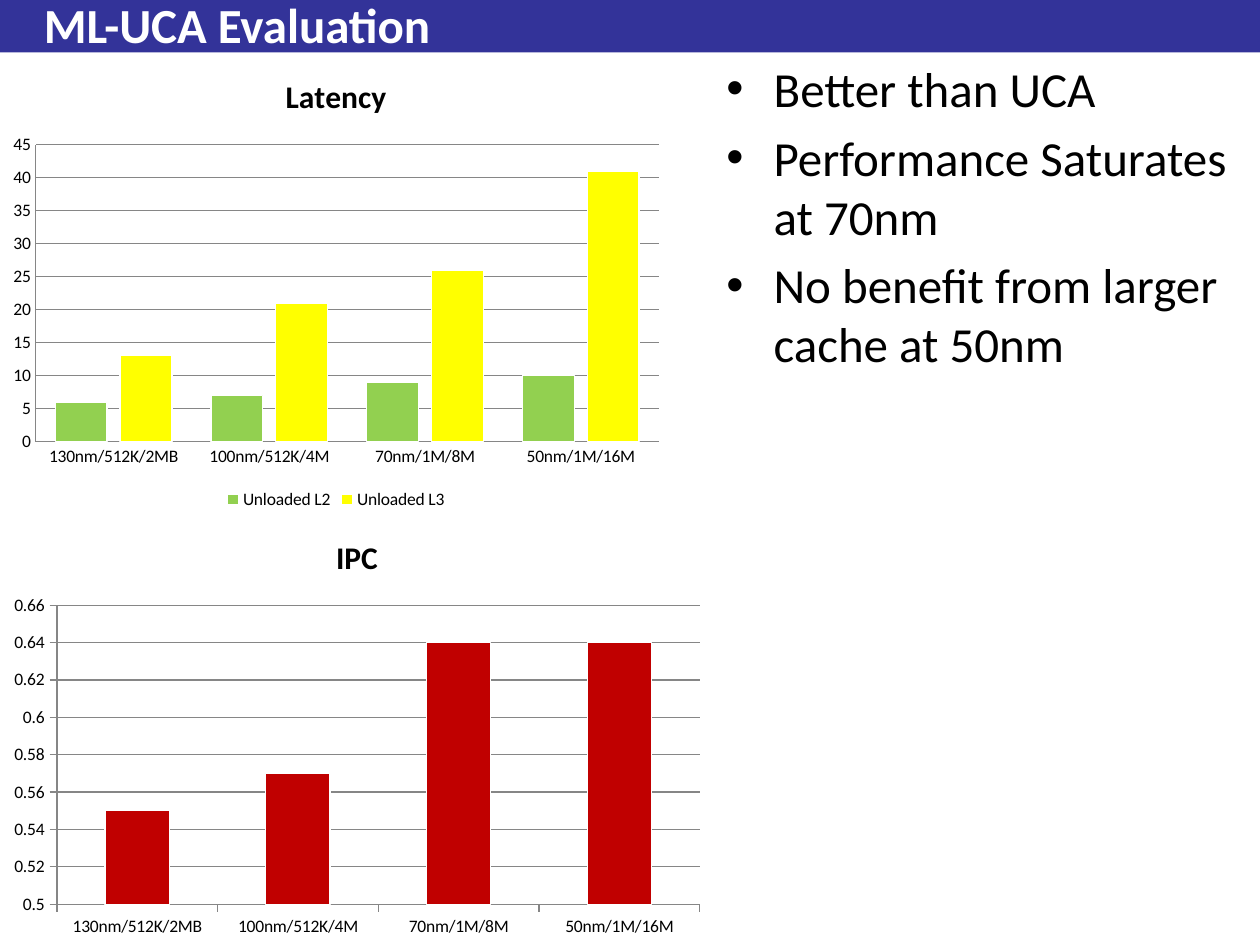
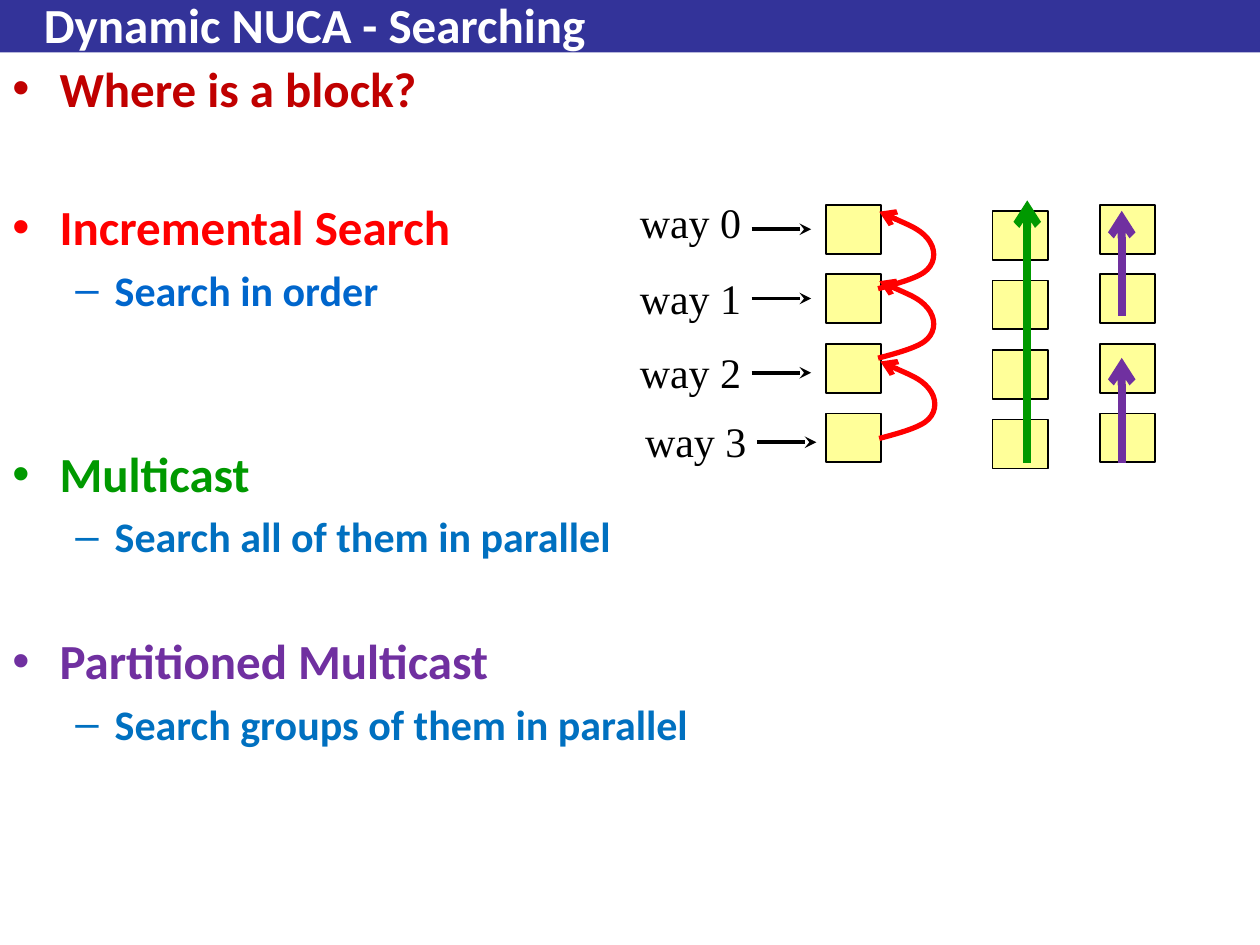
from pptx import Presentation
from pptx.chart.data import CategoryChartData
from pptx.dml.color import RGBColor
from pptx.enum.chart import XL_CHART_TYPE, XL_LEGEND_POSITION, XL_TICK_MARK
from pptx.enum.shapes import MSO_CONNECTOR, MSO_SHAPE
from pptx.enum.text import MSO_ANCHOR, MSO_AUTO_SIZE
from pptx.oxml.ns import qn
from pptx.util import Pt
from lxml import etree

COLUMNS = XL_CHART_TYPE.COLUMN_CLUSTERED
BOTTOM = XL_LEGEND_POSITION.BOTTOM
TICK_NONE, TICK_OUT = XL_TICK_MARK.NONE, XL_TICK_MARK.OUTSIDE
RECTANGLE, STRAIGHT = MSO_SHAPE.RECTANGLE, MSO_CONNECTOR.STRAIGHT
TOP, MIDDLE = MSO_ANCHOR.TOP, MSO_ANCHOR.MIDDLE
NO_FIT = MSO_AUTO_SIZE.NONE

BLACK, WHITE, NAVY, GRAY = "000000", "FFFFFF", "333399", "868686"
CREAM, RED, DARK_RED = "FFFF99", "FF0000", "C00000"
GREEN, PURPLE, BLUE = "009900", "7030A0", "0070C0"
LIME, YELLOW = "92D050", "FFFF00"

# bullet, left margin, hanging indent, text size for each outline level
LEVELS = [("•", 27, 27, 28), ("–", 58.5, 22.5, 24)]
TECHNOLOGIES = ["130nm/512K/2MB", "100nm/512K/4M", "70nm/1M/8M", "50nm/1M/16M"]


def color(code):
    return RGBColor.from_string(code)


def assign(target, values):
    for name, value in values.items():
        setattr(target, name, value)


def style_font(font, size, code=BLACK, bold=False, name="Calibri"):
    assign(font, {"size": Pt(size), "bold": bold, "name": name})
    font.color.rgb = color(code)


def style_line(line, code, width):
    line.color.rgb = color(code)
    line.width = Pt(width)


def style_fill(fill, code):
    fill.solid()
    fill.fore_color.rgb = color(code)


def add_arrowhead(shape, kind):
    outline = shape._element.xpath(".//a:ln")[0]
    etree.SubElement(outline, qn("a:tailEnd"), type=kind)


class Deck:
    """Holds the shared style and the slide being filled."""

    def __init__(self):
        self.deck = Presentation()
        assign(self.deck, {"slide_width": Pt(720), "slide_height": Pt(540)})
        self.page = None

    def start_page(self, title):
        self.page = self.deck.slides.add_slide(self.deck.slide_layouts[6])
        self.box(0, 0, 720, 30, NAVY)
        frame = self.frame(18, 3.6, 666, 20.16, MIDDLE)
        self.span(frame.paragraphs[0], title, 28, WHITE, True)

    def frame(self, left, top, width, height, anchor=TOP):
        box = self.page.shapes.add_textbox(Pt(left), Pt(top), Pt(width), Pt(height))
        assign(box.text_frame, {"word_wrap": True, "auto_size": NO_FIT,
                                "vertical_anchor": anchor})
        return box.text_frame

    def span(self, para, text, size, code=BLACK, bold=False, name="Calibri"):
        span = para.add_run()
        span.text = text
        style_font(span.font, size, code, bold, name)

    def label(self, left, top, text):
        frame = self.frame(left, top, 76.5, 36)
        self.span(frame.paragraphs[0], text, 24, name="Times New Roman")

    def outline(self, left, top, width, height, items, bold=False):
        """Add bulleted paragraphs from (level, text, colour, extra gap above)."""
        frame = self.frame(left, top, width, height)
        for index, (level, text, code, gap) in enumerate(items):
            bullet, margin, hanging, size = LEVELS[level]
            para = frame.add_paragraph() if index else frame.paragraphs[0]
            assign(para, {"level": level, "space_before": Pt(0.2 * size + gap)})
            properties = para._p.get_or_add_pPr()
            properties.set("marL", str(Pt(margin)))
            properties.set("indent", str(-Pt(hanging)))
            etree.SubElement(properties, qn("a:buFont"), typeface="Arial")
            etree.SubElement(properties, qn("a:buChar"), char=bullet)
            self.span(para, text, size, code, bold)

    def box(self, left, top, width, height, fill, border=None):
        box = self.page.shapes.add_shape(
            RECTANGLE, Pt(left), Pt(top), Pt(width), Pt(height))
        box.shadow.inherit = False
        style_fill(box.fill, fill)
        if border:
            style_line(box.line, border, 1)
        else:
            box.line.fill.background()

    def arrow(self, start, end, code, width, head):
        arrow = self.page.shapes.add_connector(
            STRAIGHT, *(Pt(length) for length in (*start, *end)))
        style_line(arrow.line, code, width)
        add_arrowhead(arrow, head)
        etree.SubElement(arrow._element.spPr, qn("a:effectLst"))

    def curve(self, start, offsets, code, width, head):
        """Draw cubic curves; each three offsets are two handles and an end."""
        left, top = start
        builder = self.page.shapes.build_freeform(Pt(left), Pt(top))
        builder.add_line_segments(
            [(Pt(left + x), Pt(top + y)) for x, y in offsets], close=False)
        curve = builder.convert_to_shape()
        segments = curve._element.xpath(".//a:lnTo")
        for first in range(0, len(segments), 3):
            cubic = etree.Element(qn("a:cubicBezTo"))
            segments[first].addprevious(cubic)
            for segment in segments[first:first + 3]:
                cubic.append(segment[0])
                segment.getparent().remove(segment)
        curve.shadow.inherit = False
        curve.fill.background()
        style_line(curve.line, code, width)
        add_arrowhead(curve, head)

    def chart(self, left, top, width, height, title, series, scale, tick, plot_style):
        """Add a column chart; series holds (name, values, colour)."""
        data = CategoryChartData()
        data.categories = TECHNOLOGIES
        for name, values, _ in series:
            data.add_series(name, values)
        chart = self.page.shapes.add_chart(
            COLUMNS, Pt(left), Pt(top), Pt(width), Pt(height), data).chart
        style_font(chart.font, 10)
        heading = chart.chart_title.text_frame.paragraphs[0]
        self.span(heading, title, 18, bold=True)
        chart.chart_title.include_in_layout = False
        chart.has_legend = len(series) > 1
        if chart.has_legend:
            assign(chart.legend, {"position": BOTTOM, "include_in_layout": False})
        for axis in (chart.category_axis, chart.value_axis):
            assign(axis, {"major_tick_mark": tick, "minor_tick_mark": TICK_NONE})
            style_line(axis.format.line, GRAY, 0.75)
        assign(chart.value_axis, scale)
        style_line(chart.value_axis.major_gridlines.format.line, GRAY, 0.75)
        plot = chart.plots[0]
        assign(plot, {"vary_by_categories": False, **plot_style})
        for columns, (_, _, code) in zip(plot.series, series):
            style_fill(columns.format.fill, code)
            style_line(columns.format.line, WHITE, 0.75)


def add_evaluation(deck):
    deck.start_page("ML-UCA Evaluation")
    deck.outline(408, 30, 312, 510, [
        (0, "Better than UCA", BLACK, 0),
        (0, "Performance Saturates at 70nm", BLACK, 0),
        (0, "No benefit from larger cache at 50nm", BLACK, 0)])
    deck.chart(
        0, 30, 384, 264, "Latency",
        [("Unloaded L2", (6, 7, 9, 10), LIME),
         ("Unloaded L3", (13, 21, 26, 41), YELLOW)],
        {"minimum_scale": 0, "maximum_scale": 45, "major_unit": 5},
        TICK_NONE, {"gap_width": 75, "overlap": -25})
    deck.chart(
        0, 294, 408, 246, "IPC", [("IPC", (0.55, 0.57, 0.64, 0.64), DARK_RED)],
        {"minimum_scale": 0.5, "maximum_scale": 0.66, "major_unit": 0.02},
        TICK_OUT, {"gap_width": 150})


def add_searching(deck):
    deck.start_page("Dynamic NUCA - Searching")
    deck.outline(0, 30, 720, 510, [
        (0, "Where is a block?", DARK_RED, 0),
        (0, "Incremental Search", RED, 39.8),
        (1, "Search in order", "0066CC", 0),
        (0, "Multicast", GREEN, 68.2),
        (1, "Search all of them in parallel", BLUE, 0),
        (0, "Partitioned Multicast", PURPLE, 34.1),
        (1, "Search groups of them in parallel", BLUE, 0)], bold=True)

    for left, top in ((472, 117), (567.2, 120.5), (628.5, 117)):
        for way in range(4):
            deck.box(left, top + 39.75 * way, 31.5, 28, CREAM, BLACK)

    ways = [(358.5, 108.7, 131), (358.5, 152, 170.6),
            (358.5, 194.4, 213), (361.5, 234, 252.7)]
    for way, (left, label_top, arrow_y) in enumerate(ways):
        deck.label(left, label_top, f"way {way}")
        deck.arrow((left + 71, arrow_y), (left + 105, arrow_y), BLACK, 2.25, "stealth")

    hop = [(12, -3.2), (24, -6.5), (28.2, -11), (33, -15.8), (33, -23),
           (28.2, -28.8), (23.5, -34.5), (0.7, -44), (0.7, -44)]
    for start in ((502.4, 250.6), (501.8, 204.7), (501.8, 165)):
        deck.curve(start, hop, RED, 3, "arrow")

    for x, bottom, top, code in ((587, 264.5, 114.5, GREEN),
                                 (641, 264.5, 204.5, PURPLE),
                                 (641, 180.5, 120.5, PURPLE)):
        deck.arrow((x, bottom), (x, top), code, 4.5, "arrow")


def main():
    deck = Deck()
    add_evaluation(deck)
    add_searching(deck)
    deck.deck.save("out.pptx")


if __name__ == "__main__":
    main()
